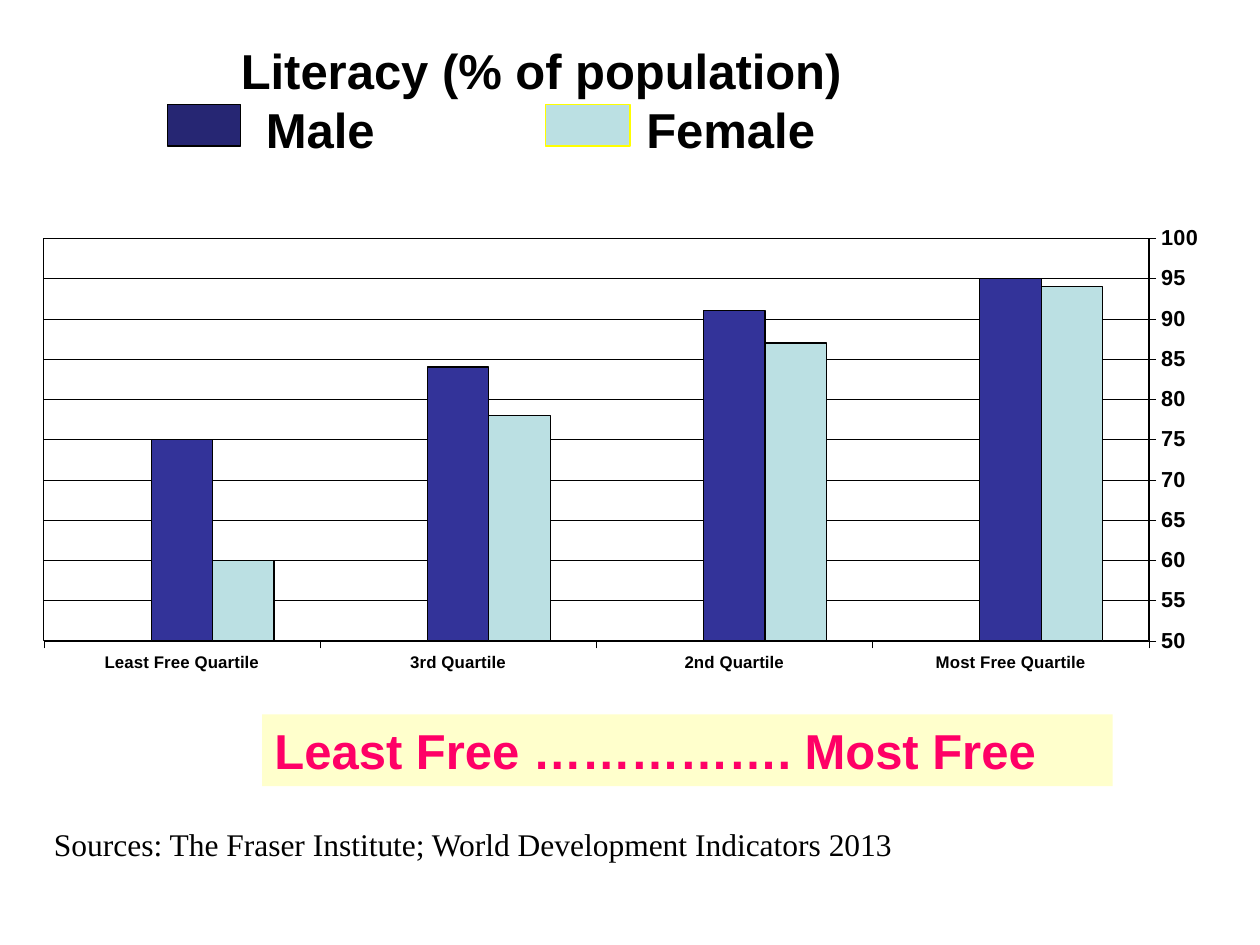
import pptx
import pptx.chart.data
import pptx.dml.color
import pptx.enum.chart
import pptx.enum.shapes
import pptx.enum.text
import pptx.oxml
import pptx.oxml.ns
import pptx.util

Inches = pptx.util.Inches
Pt = pptx.util.Pt

COLORS = {
    "black": "000000", "male": "333399", "female": "BBE0E3",
    "male_key": "262673", "yellow": "FFFF00", "teal": "009999",
    "cream": "FFFFCC", "pink": "FF0066",
}
CATEGORIES = ["Most Free Quartile", "2nd Quartile", "3rd Quartile", "Least Free Quartile"]
SERIES = [
    ("Series 1", (94, 87, 78, 60), "female"),
    ("Series 2", (95, 91, 84, 75), "male"),
    ("Series 3", (1, 2, 3, 4), "teal"),
]
PLOT_LAYOUT = {"x": 0.004, "y": 0.046, "w": 0.942, "h": 0.859}


def rgb(name):
    return pptx.dml.color.RGBColor.from_string(COLORS[name])


def style_font(font, size, color="black", bold=True, name="Arial"):
    font.name, font.size, font.bold = name, Pt(size), bold
    font.color.rgb = rgb(color)


def style_line(line, color="black", width=0.17):
    line.color.rgb = rgb(color)
    line.width = Pt(width)


def paint(fill, color):
    fill.solid()
    fill.fore_color.rgb = rgb(color)


def add_tabs(p, positions):
    """Set left tab stops, in inches from the text edge."""
    tabs = pptx.oxml.ns.qn("a:tabLst")
    tab_list = p._p.get_or_add_pPr().makeelement(tabs, {})
    p._p.get_or_add_pPr().append(tab_list)
    for pos in positions:
        tab = tab_list.makeelement(
            pptx.oxml.ns.qn("a:tab"), {"pos": str(Inches(pos)), "algn": "l"})
        tab_list.append(tab)


def set_title(slide):
    sp = slide.shapes.title
    sp.left, sp.top, sp.width, sp.height = map(Inches, (0.17, 0.25, 8.25, 1.08))
    tf = sp.text_frame
    tf.text = "Literacy (% of population)\n\tMale\tFemale"
    tf.auto_size = pptx.enum.text.MSO_AUTO_SIZE.NONE
    tf.vertical_anchor = pptx.enum.text.MSO_ANCHOR.MIDDLE
    heading, key = tf.paragraphs
    heading.alignment = pptx.enum.text.PP_ALIGN.CENTER
    key.alignment = pptx.enum.text.PP_ALIGN.LEFT
    add_tabs(key, (1.84, 4.86))
    for p in tf.paragraphs:
        p.space_before = Pt(0)
        for r in p.runs:
            style_font(r.font, 28)


def add_box(slide, left, top, width, height, fill, line=None):
    sp = slide.shapes.add_shape(
        pptx.enum.shapes.MSO_SHAPE.RECTANGLE,
        Inches(left), Inches(top), Inches(width), Inches(height))
    sp.shadow.inherit = False
    paint(sp.fill, fill)
    if line:
        style_line(sp.line, line, 0.75)
    else:
        sp.line.fill.background()
    return sp


def write(sp, text, size, **style):
    tf = sp.text_frame
    tf.word_wrap = True
    tf.vertical_anchor = pptx.enum.text.MSO_ANCHOR.MIDDLE
    tf.text = text
    p = tf.paragraphs[0]
    p.alignment = pptx.enum.text.PP_ALIGN.LEFT
    style_font(p.runs[0].font, size, **style)


def frame_plot(chart):
    """Fix the inner plot area and give it a thin black border."""
    area = chart._chartSpace.chart.plotArea
    for old in area.findall(pptx.oxml.ns.qn("c:layout")):
        area.remove(old)
    ns = pptx.oxml.ns.nsdecls("c", "a")
    sizes = "".join(f'<c:{k} val="{v}"/>' for k, v in PLOT_LAYOUT.items())
    area.insert(0, pptx.oxml.parse_xml(
        f'<c:layout {ns}><c:manualLayout><c:layoutTarget val="inner"/>'
        f'<c:xMode val="edge"/><c:yMode val="edge"/>{sizes}'
        '</c:manualLayout></c:layout>'))
    area.append(pptx.oxml.parse_xml(
        f'<c:spPr {ns}><a:noFill/><a:ln w="{Pt(0.69)}"><a:solidFill>'
        f'<a:srgbClr val="{COLORS["black"]}"/></a:solidFill></a:ln></c:spPr>'))


def add_literacy_chart(slide):
    data = pptx.chart.data.CategoryChartData(number_format="0")
    data.categories = CATEGORIES
    for name, values, _ in SERIES:
        data.add_series(name, values)
    chart = slide.shapes.add_chart(
        pptx.enum.chart.XL_CHART_TYPE.COLUMN_CLUSTERED,
        Inches(0.31), Inches(1.72), Inches(9.31), Inches(3.72), data).chart
    chart.has_legend = False
    chart.has_title = False
    style_font(chart.font, 12.4)

    plot = chart.plots[0]
    plot.vary_by_categories = False
    plot.gap_width = 150
    plot.overlap = 0
    for series, (_, _, color) in zip(plot.series, SERIES):
        series.invert_if_negative = False
        paint(series.format.fill, color)
        style_line(series.format.line, width=0.69)

    cat, val = chart.category_axis, chart.value_axis
    for axis, size in ((cat, 9.6), (val, 12.4)):
        axis.major_tick_mark = pptx.enum.chart.XL_TICK_MARK.OUTSIDE
        axis.minor_tick_mark = pptx.enum.chart.XL_TICK_MARK.NONE
        style_font(axis.tick_labels.font, size)
        style_line(axis.format.line)
    cat.reverse_order = True
    cat.tick_label_position = pptx.enum.chart.XL_TICK_LABEL_POSITION.LOW
    val.minimum_scale, val.maximum_scale, val.major_unit = 50, 100, 5
    val.tick_labels.number_format = "0"
    val.tick_labels.number_format_is_linked = False
    val.has_major_gridlines = True
    style_line(val.major_gridlines.format.line)
    frame_plot(chart)


def main():
    prs = pptx.Presentation()
    prs.slide_width, prs.slide_height = Inches(10), Inches(7.5)
    slide = prs.slides.add_slide(prs.slide_layouts[5])
    set_title(slide)
    add_literacy_chart(slide)

    scale = add_box(slide, 2.08, 5.67, 6.75, 0.57, "cream")
    write(scale, "Least Free ……………. Most Free", 28, color="pink")
    sources = slide.shapes.add_textbox(
        Inches(0.33), Inches(6.5), Inches(9.67), Inches(0.4))
    write(sources, "Sources: The Fraser Institute; World Development Indicators 2013",
          18, bold=False, name="Times New Roman")

    add_box(slide, 1.33, 0.83, 0.58, 0.33, "male_key", "black")
    add_box(slide, 4.33, 0.83, 0.67, 0.33, "female", "yellow")
    prs.save("out.pptx")


if __name__ == "__main__":
    main()
